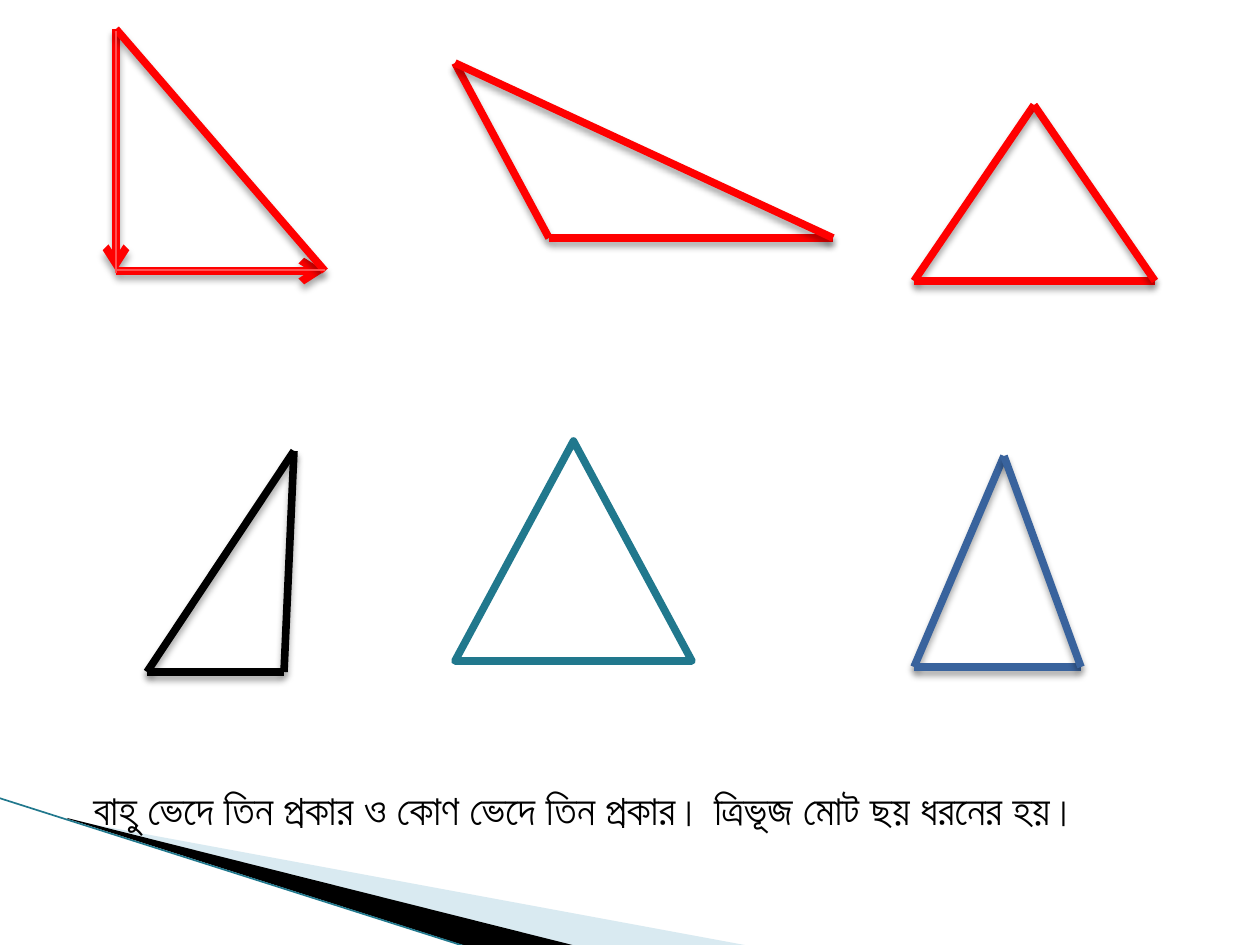
from lxml import etree
from pptx import Presentation
from pptx.dml.color import RGBColor
from pptx.enum.shapes import MSO_CONNECTOR, MSO_SHAPE
from pptx.oxml import parse_xml
from pptx.oxml.ns import nsdecls, qn
from pptx.util import Emu, Pt

EMU_PER_PX = 914400 / 126
COLORS = {
    "red": "FF0000", "thin red": "FF5050", "black": "000000", "teal": "21788D",
    "blue": "39639D", "pale": "A0CBDC",
}
SIDE_WIDTH = 4.33
CAPTION = "বাহু ভেদে তিন প্রকার ও কোণ ভেদে তিন প্রকার। ত্রিভূজ মোট ছয় ধরনের হয়।"

# Corner wedges: colour, opacity in percent, outline points
WEDGES = [
    ("pale", 40, [(69, 820), (750, 946), (575, 946), (69, 819)]),
    ("black", 100, [(67, 818), (576, 946), (469, 947), (68, 819)]),
]
CORNER_EDGE = ((-1, 798), (467, 947))

# Each triangle: colour, three corners, sides that carry an arrowhead,
# and thin lines laid over the sides
TRIANGLES = [
    ("red", [(116, 29), (116, 271), (325, 271)], [0, 1],
     [((116, 31), (116, 273)), ((116, 270), (325, 270))]),
    ("red", [(455, 63), (549, 238), (833, 238)], [], []),
    ("red", [(1034, 105), (914, 281), (1155, 281)], [], []),
    ("black", [(294, 451), (147, 672), (284, 672)], [], []),
    ("blue", [(1004, 456), (914, 667), (1081, 667)], [], []),
]
EQUILATERAL = (455, 441, 237, 220)
CAPTION_BOX = (81, 777, 1099, 63)

SHADOW = (
    f'<a:effectLst {nsdecls("a")}><a:outerShdw blurRad="50800" dist="38100" '
    'dir="5400000" rotWithShape="0"><a:srgbClr val="000000">'
    '<a:alpha val="35000"/></a:srgbClr></a:outerShdw></a:effectLst>'
)
NO_SHADOW = f'<a:effectLst {nsdecls("a")}/>'


def px(*lengths):
    return [Emu(round(length * EMU_PER_PX)) for length in lengths]


def color(name):
    return RGBColor.from_string(COLORS[name])


def add_line(shapes, start, end, color_name, width, shadow=False, arrow=False):
    line = shapes.add_connector(MSO_CONNECTOR.STRAIGHT, *px(*start, *end))
    line.line.color.rgb = color(color_name)
    line.line.width = Pt(width)
    if arrow:
        etree.SubElement(line.line._get_or_add_ln(), qn("a:tailEnd"), type="arrow")
    line._element.spPr.append(parse_xml(SHADOW if shadow else NO_SHADOW))


def add_wedge(shapes, color_name, opacity, points):
    builder = shapes.build_freeform(*points[0], scale=EMU_PER_PX)
    builder.add_line_segments(points[1:], close=True)
    wedge = builder.convert_to_shape()
    wedge.shadow.inherit = False
    wedge.line.fill.background()
    wedge.fill.solid()
    wedge.fill.fore_color.rgb = color(color_name)
    if opacity < 100:
        tint = wedge._element.spPr.find(f".//{qn('a:srgbClr')}")
        etree.SubElement(tint, qn("a:alpha"), val=str(opacity * 1000))


def add_triangle(shapes, color_name, corners, arrow_sides, overlays):
    group = shapes.add_group_shape()
    for side, start in enumerate(corners):
        end = corners[(side + 1) % 3]
        add_line(group.shapes, start, end, color_name, SIDE_WIDTH,
                 shadow=True, arrow=side in arrow_sides)
    for start, end in overlays:
        add_line(group.shapes, start, end, "thin red", 0.75)


def add_equilateral(shapes):
    triangle = shapes.add_shape(MSO_SHAPE.ISOSCELES_TRIANGLE, *px(*EQUILATERAL))
    triangle.shadow.inherit = False
    triangle.fill.background()
    triangle.line.color.rgb = color("teal")
    triangle.line.width = Pt(SIDE_WIDTH)


def add_caption(shapes):
    frame = shapes.add_textbox(*px(*CAPTION_BOX)).text_frame
    frame.word_wrap = True
    caption = frame.paragraphs[0]
    caption.text = CAPTION
    caption.font.name = "Lato"
    caption.font.size = Pt(24)
    caption.font.color.rgb = color("black")


def main():
    deck = Presentation()
    deck.slide_width, deck.slide_height = px(1260, 945)
    shapes = deck.slides.add_slide(deck.slide_layouts[6]).shapes
    for wedge in WEDGES:
        add_wedge(shapes, *wedge)
    add_line(shapes, *CORNER_EDGE, "teal", 0.95)
    for triangle in TRIANGLES:
        add_triangle(shapes, *triangle)
    add_equilateral(shapes)
    add_caption(shapes)
    deck.save("out.pptx")


if __name__ == "__main__":
    main()
